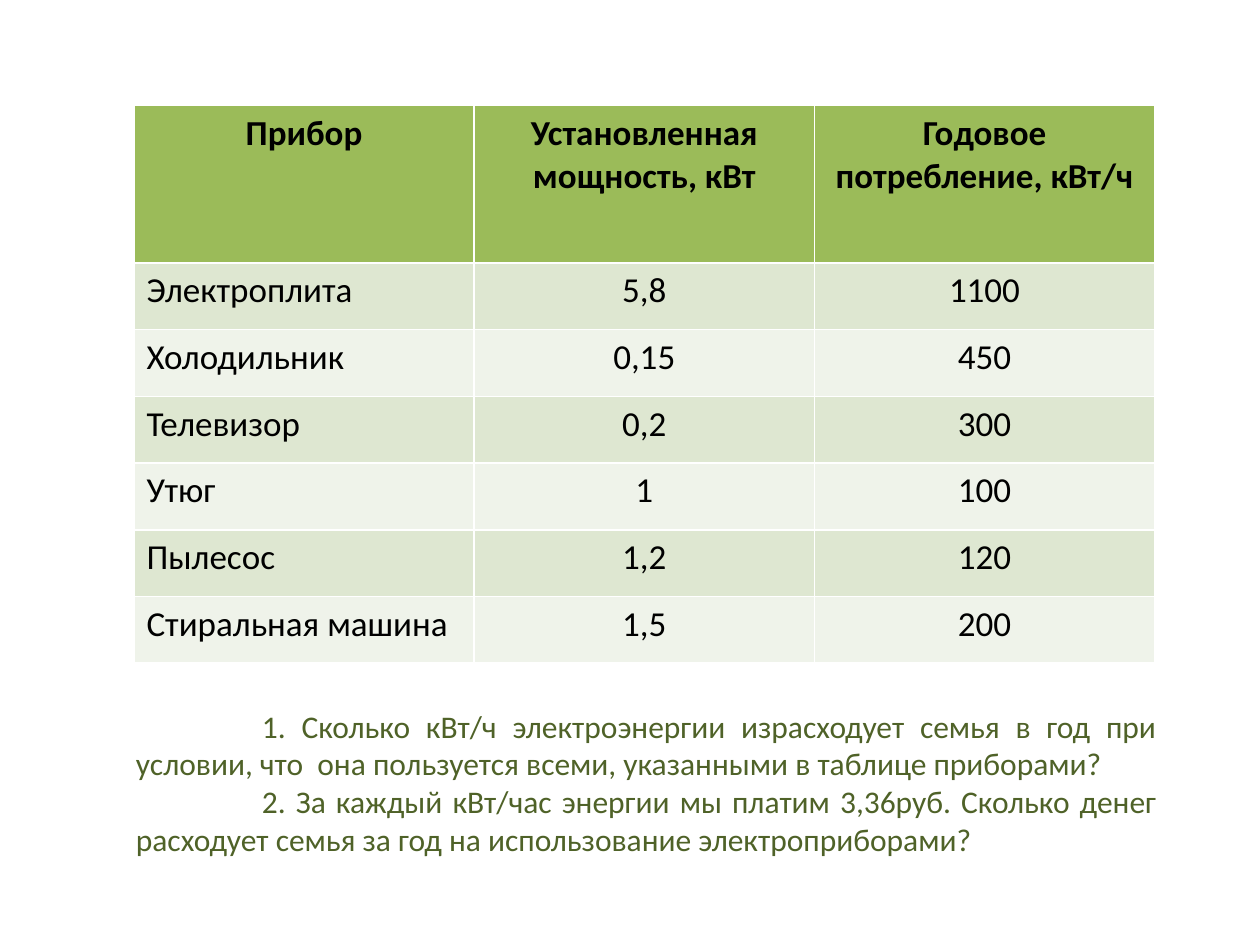
from dataclasses import dataclass

from pptx import Presentation
from pptx.dml.color import RGBColor
from pptx.enum.text import MSO_AUTO_SIZE, PP_ALIGN
from pptx.util import Cm, Pt


@dataclass(frozen=True)
class Theme:
    font: str = "Calibri"
    table_size: Pt = Pt(20)
    question_size: Pt = Pt(18)
    text: RGBColor = RGBColor(0x00, 0x00, 0x00)
    question: RGBColor = RGBColor(0x4F, 0x62, 0x28)
    header: RGBColor = RGBColor(0x9B, 0xBB, 0x59)
    bands: tuple = (RGBColor(0xDE, 0xE7, 0xD1), RGBColor(0xEF, 0xF3, 0xEA))


THEME = Theme()

APPLIANCES = [
    ("Прибор", "Установленная мощность, кВт", "Годовое потребление, кВт/ч"),
    ("Электроплита", "5,8", "1100"),
    ("Холодильник", "0,15", "450"),
    ("Телевизор", "0,2", "300"),
    ("Утюг", "1", "100"),
    ("Пылесос", "1,2", "120"),
    ("Стиральная машина", "1,5", "200"),
]

QUESTIONS = [
    "1. Сколько кВт/ч электроэнергии израсходует семья в год при условии, "
    "что  она пользуется всеми, указанными в таблице приборами?",
    "2. За каждый кВт/час энергии мы платим 3,36руб. Сколько денег "
    "расходует семья за год на использование электроприборами?",
]


def style_paragraph(p, size, color, align, bold=False):
    p.alignment = align
    p.font.name = THEME.font
    p.font.size = size
    p.font.bold = bold
    p.font.color.rgb = color


def add_appliance_table(s, left, top, width, height, header_height):
    rows, cols = len(APPLIANCES), len(APPLIANCES[0])
    table = s.shapes.add_table(rows, cols, left, top, width, height).table
    for column in table.columns:
        column.width = width // cols
    for i, values in enumerate(APPLIANCES):
        is_header = i == 0
        table.rows[i].height = (
            header_height if is_header else (height - header_height) // (rows - 1)
        )
        for j, value in enumerate(values):
            cell = table.cell(i, j)
            cell.fill.solid()
            cell.fill.fore_color.rgb = (
                THEME.header if is_header else THEME.bands[(i - 1) % 2]
            )
            cell.text = value
            align = PP_ALIGN.CENTER if is_header or j else PP_ALIGN.LEFT
            style_paragraph(cell.text_frame.paragraphs[0], THEME.table_size,
                            THEME.text, align, is_header)


def add_questions(s, left, top, width, height):
    tf = s.shapes.add_textbox(left, top, width, height).text_frame
    tf.word_wrap = True
    tf.auto_size = MSO_AUTO_SIZE.SHAPE_TO_FIT_TEXT
    tf.text = "\n".join(QUESTIONS)
    for p in tf.paragraphs:
        pPr = p._p.get_or_add_pPr()
        pPr.set("marL", "0")
        pPr.set("indent", str(Cm(2.54)))
        style_paragraph(p, THEME.question_size, THEME.question, PP_ALIGN.JUSTIFY)


def main():
    prs = Presentation()
    prs.slide_width, prs.slide_height = Cm(25.4), Cm(19.05)
    s = prs.slides.add_slide(prs.slide_layouts[6])
    add_appliance_table(s, Cm(2.7), Cm(2.13), Cm(20.58), Cm(11.24), Cm(3.17))
    add_questions(s, Cm(2.49), Cm(14.12), Cm(21.08), Cm(3.33))
    prs.save("out.pptx")


if __name__ == "__main__":
    main()
